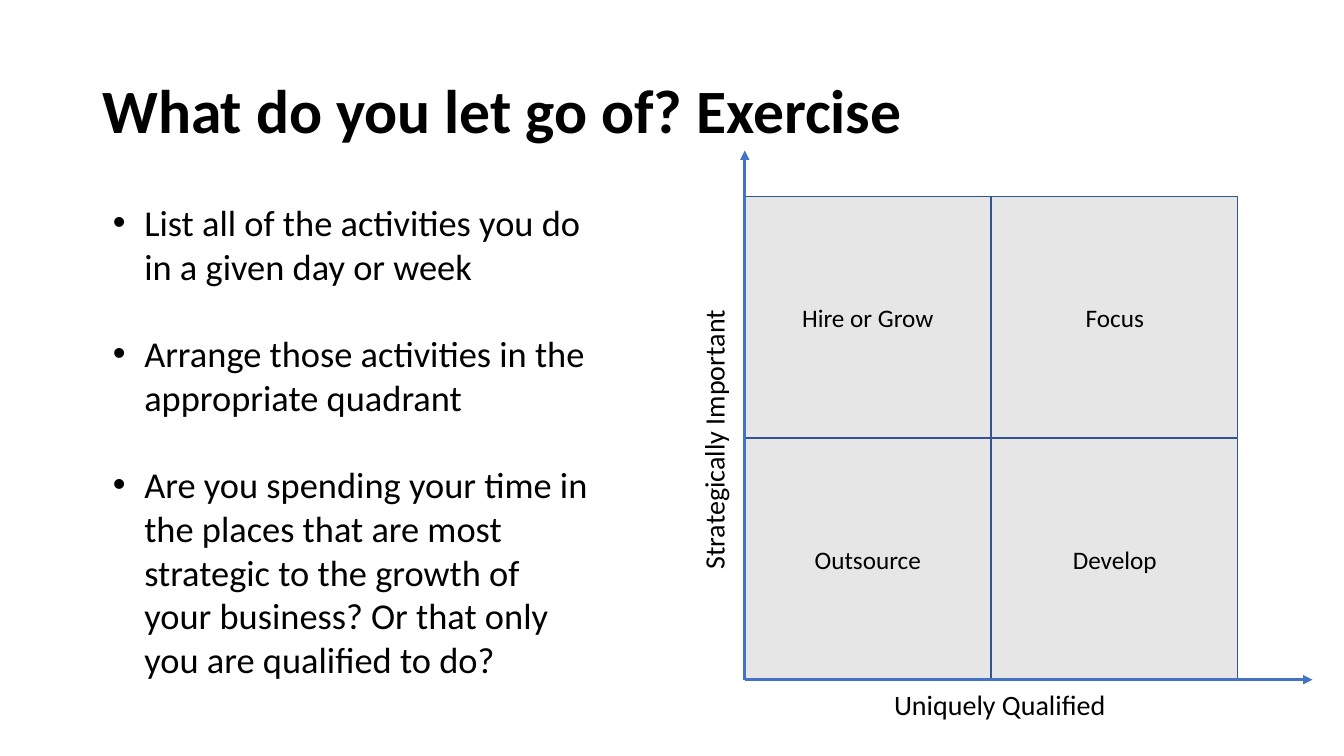
from lxml import etree
from pptx import Presentation
from pptx.dml.color import RGBColor
from pptx.enum.shapes import MSO_CONNECTOR, MSO_SHAPE
from pptx.enum.text import MSO_ANCHOR, PP_ALIGN
from pptx.oxml.ns import qn
from pptx.util import Pt

RECTANGLE = MSO_SHAPE.RECTANGLE
STRAIGHT = MSO_CONNECTOR.STRAIGHT
MIDDLE = MSO_ANCHOR.MIDDLE
CENTER = PP_ALIGN.CENTER


def color(hex_value):
    return RGBColor.from_string(hex_value)


def add_text(paragraph, text, size, bold=False):
    run = paragraph.add_run()
    run.text = text
    run.font.name = "Calibri"
    run.font.size = Pt(size)
    run.font.bold = bold
    run.font.color.rgb = color("000000")


prs = Presentation()
prs.slide_width, prs.slide_height = Pt(960), Pt(540)
slide = prs.slides.add_slide(prs.slide_layouts[6])
shapes = slide.shapes

title = shapes.add_textbox(Pt(66), Pt(28.75), Pt(828), Pt(104.4)).text_frame
title.word_wrap = True
title.vertical_anchor = MIDDLE
title.paragraphs[0].line_spacing = 0.9
add_text(title.paragraphs[0], "What do you let go of? Exercise", 44, True)

grid_left, grid_top = 532, 140.5
column_step, row_step = 176.4, 172.8
quadrants = [["Hire or Grow", "Focus"], ["Outsource", "Develop"]]
for row, names in enumerate(quadrants):
    for column, name in enumerate(names):
        quadrant = shapes.add_shape(
            RECTANGLE,
            Pt(grid_left + column * column_step), Pt(grid_top + row * row_step),
            Pt(175.8), Pt(172.2))
        quadrant.shadow.inherit = False
        quadrant.fill.solid()
        quadrant.fill.fore_color.rgb = color("E7E6E6")
        quadrant.line.color.rgb = color("325491")
        quadrant.line.width = Pt(1)
        quadrant.text_frame.vertical_anchor = MIDDLE
        label = quadrant.text_frame.paragraphs[0]
        label.alignment = CENTER
        add_text(label, name, 18)

origin_y = 485.5
for end_x, end_y in [(937.5, origin_y), (grid_left, 107.5)]:
    axis = shapes.add_connector(
        STRAIGHT, Pt(grid_left), Pt(origin_y), Pt(end_x), Pt(end_y))
    axis.line.color.rgb = color("4472C4")
    axis.line.width = Pt(2.25)
    etree.SubElement(axis.line._get_or_add_ln(), qn("a:tailEnd"), type="triangle")
    etree.SubElement(axis._element.spPr, qn("a:effectLst"))

axis_labels = [
    ("Uniquely Qualified", 631.5, 487.5, 167, 0),
    ("Strategically Important", 409, 297.4, 201.6, 270),
]
for text, left, top, width, rotation in axis_labels:
    axis_label = shapes.add_textbox(Pt(left), Pt(top), Pt(width), Pt(31.5))
    axis_label.rotation = rotation
    axis_label.text_frame.word_wrap = False
    add_text(axis_label.text_frame.paragraphs[0], text, 20)

steps = [
    "List all of the activities you do in a given day or week",
    "Arrange those activities in the appropriate quadrant",
    "Are you spending your time in the places that are most strategic to the "
    "growth of your business? Or that only you are qualified to do?",
]
instructions = shapes.add_textbox(Pt(73.5), Pt(139.7), Pt(355.7), Pt(375.8)).text_frame
instructions.word_wrap = True
for index, step in enumerate(steps):
    item = instructions.add_paragraph() if index else instructions.paragraphs[0]
    if index:
        item.space_before = Pt(31.2)
    properties = item._p.get_or_add_pPr()
    properties.set("marL", str(Pt(22.5)))
    properties.set("indent", str(-Pt(22.5)))
    etree.SubElement(properties, qn("a:buFont"), typeface="Arial")
    etree.SubElement(properties, qn("a:buChar"), char="•")
    add_text(item, step, 26)

prs.save("out.pptx")
